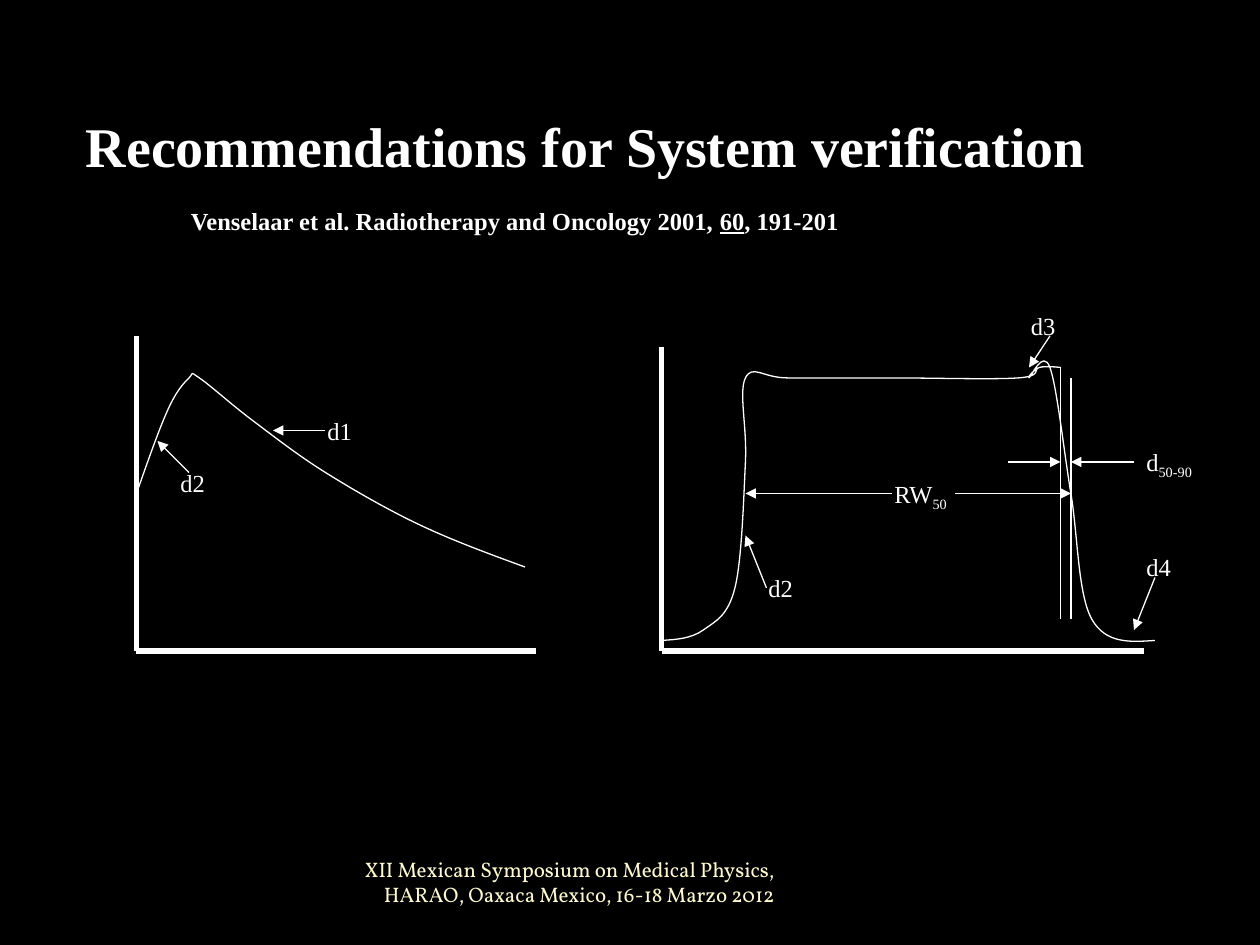
from lxml import etree
from pptx import Presentation
from pptx.dml.color import RGBColor
from pptx.enum.shapes import MSO_CONNECTOR
from pptx.enum.text import MSO_ANCHOR, MSO_AUTO_SIZE, PP_ALIGN
from pptx.oxml.ns import qn
from pptx.util import Pt

STRAIGHT = MSO_CONNECTOR.STRAIGHT
TOP, MIDDLE = MSO_ANCHOR.TOP, MSO_ANCHOR.MIDDLE
LEFT, RIGHT = PP_ALIGN.LEFT, PP_ALIGN.RIGHT
GROW, FIXED = MSO_AUTO_SIZE.SHAPE_TO_FIT_TEXT, MSO_AUTO_SIZE.NONE

THEME = {
    "back": RGBColor(0, 0, 0),
    "ink": RGBColor(0xFF, 0xFF, 0xFF),
    "footer": RGBColor(0xFE, 0xFA, 0xC9),
    "font": "Times New Roman",
    "footer_font": "Vollkorn",
    "title_size": 32,
    "text_size": 14,
    "footer_size": 12,
    "axis_width": 3,
    "thin_width": 0.75,
}

# Content: runs are (text, style); boxes are (left, top, width, height) in points
TITLE = [("Recommendations for System verification", "")]
CITATION = [("Venselaar et al. Radiotherapy and Oncology 2001, ", ""),
            ("60", "underline"), (", 191-201", "")]
FOOTER = [("XII Mexican Symposium on Medical Physics, "
           "HARAO, Oaxaca Mexico, 16-18 Marzo 2012", "")]
LABEL_HEIGHT = 24
LABELS = [  # left, top, width, runs
    (180, 234, 36, [("d1", "")]),
    (96, 264, 48, [("d2", "")]),
    (432, 324, 48, [("d2", "")]),
    (582, 174, 48, [("d3", "")]),
    (648, 312, 36, [("d4", "")]),
    (648, 252, 72, [("d", ""), ("50-90", "subscript")]),
    (504, 270, 60, [("RW", ""), ("50", "subscript")]),
]

# Lines are (start x, start y, end x, end y) in points
AXES = [(78, 192, 78, 372), (78, 372, 306, 372),
        (378, 198, 378, 372), (378, 372, 654, 372)]
PENUMBRA_EDGES = [(606, 210, 606, 354), (612, 216, 612, 354)]
ARROWS = [
    (186, 246, 156, 246), (108, 270, 90, 252),   # depth dose: d1, d2
    (438, 336, 426, 306), (600, 192, 588, 210),  # profile: d2, d3
    (660, 330, 648, 360),                        # profile: d4
    (576, 264, 606, 264), (648, 264, 612, 264),  # penumbra d50-90
    (510, 282, 426, 282), (546, 282, 612, 282),  # width RW50
]

# Curves run smoothly through these knots
DEPTH_DOSE = [(78, 282), (96, 234), (108, 216), (114, 216),
              (144, 240), (186, 270), (240, 300), (300, 324)]
BEAM_PROFILE = [(378, 366), (402, 360), (420, 336), (426, 264), (426, 216),
                (450, 216), (510, 216), (582, 216), (594, 210), (606, 210),
                (594, 210), (588, 216), (600, 210), (612, 282), (624, 354),
                (660, 366)]
UNITS = 100  # freeform units per point


def add_text(page, box, runs, size, bold=False, font=THEME["font"],
             color=THEME["ink"], align=LEFT, anchor=TOP, fit=GROW):
    frame = page.shapes.add_textbox(*map(Pt, box)).text_frame
    frame.word_wrap = True
    frame.auto_size = fit
    frame.vertical_anchor = anchor
    para = frame.paragraphs[0]
    para.alignment = align
    para.font.name, para.font.size, para.font.bold = font, Pt(size), bold
    para.font.color.rgb = color
    for text, style in runs:
        span = para.add_run()
        span.text = text
        if style == "underline":
            span.font.underline = True
        elif style == "subscript":
            span._r.get_or_add_rPr().set("baseline", "-25000")


def add_line(page, ends, width, arrow=False):
    line = page.shapes.add_connector(STRAIGHT, *map(Pt, ends))
    line.line.color.rgb = THEME["ink"]
    line.line.width = Pt(width)
    if arrow:
        etree.SubElement(line.line._get_or_add_ln(), qn("a:tailEnd"), type="triangle")
    etree.SubElement(line._element.spPr, qn("a:effectLst"))


def midpoint(a, b):
    return tuple((u + v) / 2 for u, v in zip(a, b))


def handle(knot, toward, away):
    """Control point a sixth of the neighbours' distance from the knot."""
    return tuple(k + (t - a) / 6 for k, t, a in zip(knot, toward, away))


def curve_points(knots):
    """Start point, then two control points and an end point per segment."""
    points = [knots[0]]
    last = len(knots) - 2
    for i in range(last + 1):
        start, end = knots[i], knots[i + 1]
        leave = handle(start, end, knots[i - 1]) if i > 0 else None
        arrive = handle(end, start, knots[i + 2]) if i < last else None
        leave = leave or midpoint(start, arrive)
        arrive = arrive or midpoint(leave, end)
        points += [leave, arrive, end]
    return points


def add_curve(page, knots):
    points = [(round(x * UNITS), round(y * UNITS)) for x, y in curve_points(knots)]
    builder = page.shapes.build_freeform(*points[0], scale=Pt(1) / UNITS)
    builder.add_line_segments(points[1:], close=False)
    curve = builder.convert_to_shape()

    # Join each three straight steps into one Bézier segment
    outline = next(curve._element.iter(qn("a:path")))
    steps = outline.findall(qn("a:lnTo"))
    for i in range(0, len(steps), 3):
        bezier = etree.SubElement(outline, qn("a:cubicBezTo"))
        for step in steps[i:i + 3]:
            bezier.append(step[0])
            outline.remove(step)

    curve.shadow.inherit = False
    curve.fill.background()
    curve.line.color.rgb = THEME["ink"]
    curve.line.width = Pt(THEME["thin_width"])


def main():
    deck = Presentation()
    deck.slide_width, deck.slide_height = Pt(720), Pt(540)
    page = deck.slides.add_slide(deck.slide_layouts[6])
    page.background.fill.solid()
    page.background.fill.fore_color.rgb = THEME["back"]

    # Heading
    add_text(page, (42, 60, 642, 46), TITLE, THEME["title_size"], bold=True)
    add_text(page, (102, 114, 492, 24), CITATION, THEME["text_size"], bold=True)

    # Depth dose and beam profile graphs
    for ends in AXES:
        add_line(page, ends, THEME["axis_width"])
    for knots in (DEPTH_DOSE, BEAM_PROFILE):
        add_curve(page, knots)

    # Region labels and their pointers
    for left, top, width, runs in LABELS:
        add_text(page, (left, top, width, LABEL_HEIGHT), runs, THEME["text_size"])
    for ends in PENUMBRA_EDGES:
        add_line(page, ends, THEME["thin_width"])
    for ends in ARROWS:
        add_line(page, ends, THEME["thin_width"], arrow=True)

    # Footer
    add_text(page, (168, 489, 282, 30), FOOTER, THEME["footer_size"],
             font=THEME["footer_font"], color=THEME["footer"],
             align=RIGHT, anchor=MIDDLE, fit=FIXED)

    deck.save("out.pptx")


if __name__ == "__main__":
    main()
